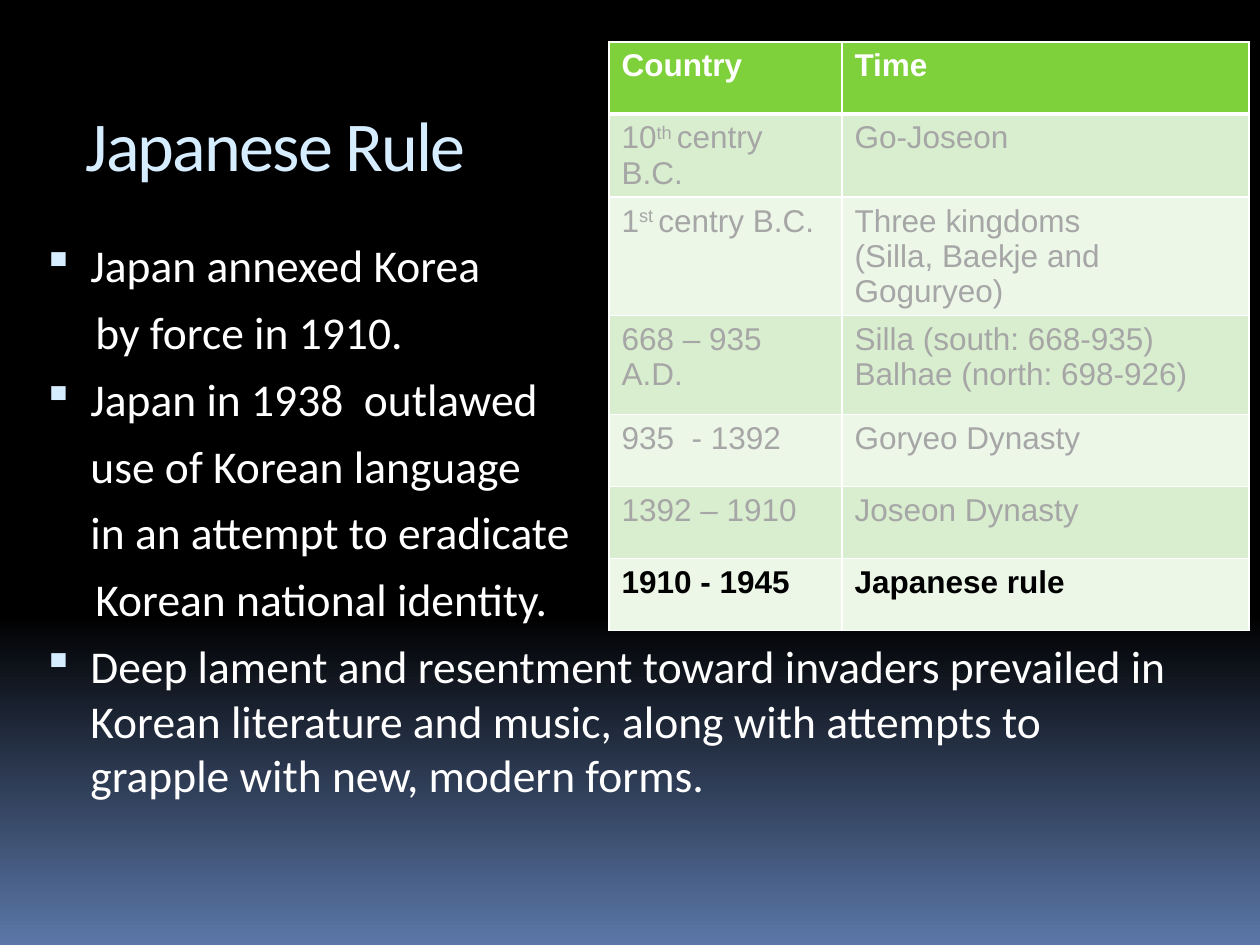
from lxml import etree
from pptx import Presentation
from pptx.dml.color import RGBColor
from pptx.enum.text import MSO_ANCHOR, MSO_AUTO_SIZE, PP_ALIGN
from pptx.oxml.ns import qn
from pptx.util import Emu, Pt

TOP, LEFT, FIXED = MSO_ANCHOR.TOP, PP_ALIGN.LEFT, MSO_AUTO_SIZE.NONE
BLACK = RGBColor(0x00, 0x00, 0x00)
WHITE = RGBColor(0xFF, 0xFF, 0xFF)
BLUE = RGBColor(0x5B, 0x77, 0xA8)
PALE = RGBColor(0xD6, 0xEC, 0xFF)
GREY = RGBColor(0xA6, 0xA6, 0xA6)
GREEN = RGBColor(0x7F, 0xD1, 0x3B)
BANDS = [RGBColor(0xEC, 0xF7, 0xE8), RGBColor(0xD8, 0xEE, 0xCE)]

# Each cell is a list of paragraphs; "^" sets off a raised part
ROWS = [
    (["Country"], ["Time"]),
    (["10^th ^centry B.C."], ["Go-Joseon"]),
    (["1^st ^centry B.C."], ["Three kingdoms", "(Silla, Baekje and Goguryeo)"]),
    (["668 – 935 A.D."], ["Silla (south: 668-935)", "Balhae (north: 698-926)"]),
    (["935  - 1392"], ["Goryeo Dynasty"]),
    (["1392 – 1910"], ["Joseon Dynasty"]),
    (["1910 - 1945"], ["Japanese rule"]),
]
COLS = [233, 407]
HEIGHTS = [72, 72, 99, 99, 72, 72, 72]

# Text, left margin in px, bullet or not
POINTS = [
    ("Japan annexed Korea", 57, True),
    ("by force in 1910.", 62, False),
    ("Japan in 1938  outlawed", 57, True),
    ("use of Korean language", 57, False),
    ("in an attempt to eradicate", 57, False),
    ("Korean national identity.", 62, False),
    ("Deep lament and resentment toward invaders prevailed in Korean "
     "literature and music, along with attempts to grapple with new, "
     "modern forms.", 57, True),
]


def px(n):
    return Emu(round(n * 914400 / 126))


def put(obj, vals):
    for key, val in vals.items():
        setattr(obj, key, val)


def sub(node, tag, **attrs):
    return etree.SubElement(node, qn(tag), attrs)


class Deck:
    def __init__(self, wide, high):
        self.prs = Presentation()
        put(self.prs, {"slide_width": px(wide), "slide_height": px(high)})
        self.slide = self.prs.slides.add_slide(self.prs.slide_layouts[5])
        self.head = {"name": "Calibri", "size": Pt(40), "bold": False}
        self.body = {"name": "Calibri", "size": Pt(26)}
        self.cell = {"name": "Arial", "size": Pt(18)}

    def run(self, para, text, style, color):
        run = para.add_run()
        run.text = text
        put(run.font, style)
        run.font.color.rgb = color
        return run

    def back(self):
        fill = self.slide.background.fill
        fill.gradient()
        fill.gradient_angle = 270
        for stop, pos, color in zip(fill.gradient_stops, (0.65, 1), (BLACK, BLUE)):
            stop.position = pos
            stop.color.rgb = color

    def frame(self, shape):
        put(shape.text_frame, {"word_wrap": True, "auto_size": FIXED,
                               "vertical_anchor": TOP})
        return shape.text_frame

    def title(self, text, x, y, w, h):
        shape = self.slide.shapes.title
        put(shape, {"left": px(x), "top": px(y), "width": px(w), "height": px(h)})
        para = self.frame(shape).paragraphs[0]
        para.alignment = LEFT
        run = self.run(para, text, self.head, PALE)
        run.font._element.set("spc", "-100")

    def points(self, items, x, y, w, h):
        box = self.slide.shapes.add_textbox(px(x), px(y), px(w), px(h))
        frame = self.frame(box)
        for i, (text, left, mark) in enumerate(items):
            para = frame.add_paragraph() if i else frame.paragraphs[0]
            props = para._p.get_or_add_pPr()
            props.set("marL", str(px(left)))
            props.set("indent", str(px(-48 if mark else 0)))
            if mark:
                sub(sub(props, "a:buClr"), "a:srgbClr", val=str(PALE))
                sub(props, "a:buSzPct", val="95000")
                sub(props, "a:buChar", char="▪")
            if i:
                para.space_before = Pt(7)
            self.run(para, text, self.body, WHITE)

    def edges(self, cell, top, base):
        props = cell._tc.get_or_add_tcPr()
        for side, width in zip("LRTB", (1, 1, top, base)):
            line = sub(props, "a:ln" + side, w=str(Pt(width)))
            sub(sub(line, "a:solidFill"), "a:srgbClr", val=str(WHITE))

    def table(self, rows, cols, highs, x, y):
        grid = self.slide.shapes.add_table(
            len(rows), len(cols), px(x), px(y), px(sum(cols)), px(sum(highs))).table
        for col, wide in zip(grid.columns, cols):
            col.width = px(wide)
        for i, (row, high) in enumerate(zip(rows, highs)):
            grid.rows[i].height = px(high)
            first, last = i == 0, i == len(rows) - 1
            color = WHITE if first else BLACK if last else GREY
            style = {**self.cell, "bold": first or last}
            for j, lines in enumerate(row):
                cell = grid.cell(i, j)
                self.edges(cell, 3 if i == 1 else 1, 3 if first else 1)
                cell.fill.solid()
                cell.fill.fore_color.rgb = GREEN if first else BANDS[i % 2]
                for k, text in enumerate(lines):
                    frame = cell.text_frame
                    para = frame.add_paragraph() if k else frame.paragraphs[0]
                    for n, part in enumerate(text.split("^")):
                        run = self.run(para, part, style, color)
                        if n % 2:
                            run.font._element.set("baseline", "30000")


def main():
    deck = Deck(1260, 945)
    deck.back()
    deck.title("Japanese Rule", 73, 95, 431, 126)
    deck.table(ROWS, COLS, HEIGHTS, 609, 42)
    deck.points(POINTS, 21, 231, 1176, 672)
    deck.prs.save("out.pptx")


if __name__ == "__main__":
    main()
